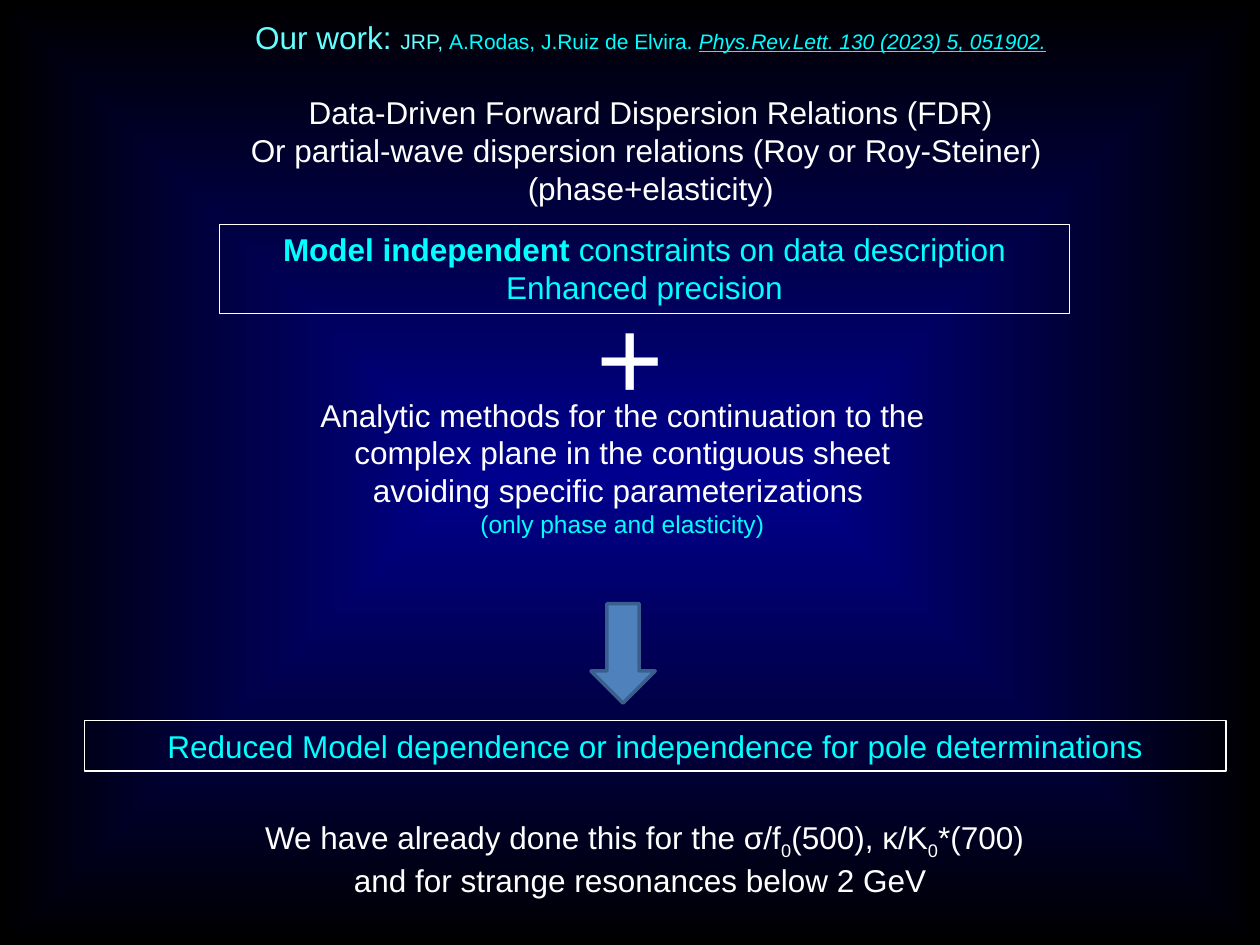
"""Build the slide on dispersion relations and pole determinations."""
import lxml.etree
import pptx
import pptx.dml.color
import pptx.enum.shapes
import pptx.enum.text
import pptx.oxml.ns
import pptx.util

Pt = pptx.util.Pt
RGB = pptx.dml.color.RGBColor
SHAPE = pptx.enum.shapes.MSO_SHAPE
qn = pptx.oxml.ns.qn

NAVY = RGB(0x00, 0x00, 0x8E)
BLACK = RGB(0x00, 0x00, 0x00)
WHITE = RGB(0xFF, 0xFF, 0xFF)
CYAN = RGB(0x00, 0xFF, 0xFF)
PALE_CYAN = RGB(0x66, 0xFF, 0xFF)
STEEL = RGB(0x4F, 0x81, 0xBD)
DARK_STEEL = RGB(0x3A, 0x5F, 0x8C)

SUB = {"baseline": "-25000"}
CITATION = {"size": 12, "color": CYAN}

# Each paragraph: size, colour, space before, runs of (text, overrides)
CONCLUSION = [(18, CYAN, 0, [
    ("Reduced Model dependence or independence for pole determinations", {})])]
METHOD = [
    (18, PALE_CYAN, 0, [
        ("Our work: ", {}),
        ("JRP, ", {"size": 12}),
        ("A.Rodas, J.Ruiz de Elvira. ", CITATION),
        ("Phys.Rev.Lett. 130 (2023) 5, 051902.",
         {**CITATION, "italic": True, "underline": True})]),
    (18, WHITE, 21.6, [("Data-Driven Forward Dispersion Relations (FDR)", {})]),
    (18, WHITE, 0, [("Or partial-wave dispersion relations (Roy or Roy-Steiner) ", {})]),
    (18, WHITE, 0, [("(phase+elasticity)", {})]),
]
RESULTS = [
    (18, WHITE, 0, [
        ("We have already done this for the σ/f", {}), ("0", SUB),
        ("(500), κ/K", {}), ("0", SUB), ("*(700)", {})]),
    (18, WHITE, 0, [("and for strange resonances below 2 GeV ", {})]),
]
CONSTRAINTS = [
    (18, CYAN, 0, [("Model independent ", {"bold": True}),
                   ("constraints on data description", {})]),
    (18, CYAN, 0, [("Enhanced precision", {})]),
]
PLUS = [(66, WHITE, 0, [("+", {})])]
CONTINUATION = [
    (18, WHITE, 0, [("Analytic methods for the continuation to the complex plane"
                     " in the contiguous sheet", {})]),
    (18, WHITE, 0, [("avoiding specific parameterizations ", {})]),
    (14, CYAN, 0, [("(only phase and elasticity)", {})]),
]

TEXT_BOXES = [
    (CONCLUSION, (48.24, 411.84, 652.32, 28.8), True, True),
    (METHOD, (133.92, 6.48, 475.92, 116.64), False, False),
    (RESULTS, (112.32, 463.68, 511.92, 51.12), False, True),
    (CONSTRAINTS, (125.28, 128.16, 486, 51.12), True, True),
    (PLUS, (333.36, 159.12, 53.28, 87.12), False, False),
    (CONTINUATION, (175.68, 222.48, 360, 90), False, True),
]
ARROW_PLACE = (337.68, 344.88, 36.72, 56.88)


def paint_background(page):
    fill = page.background.fill
    fill.gradient()
    for stop, color in zip(fill.gradient_stops, (NAVY, BLACK)):
        stop.color.rgb = color
    gradient = page.element.find(".//" + qn("a:gradFill"))
    gradient.remove(gradient.find(qn("a:lin")))
    focus = lxml.etree.SubElement(gradient, qn("a:path"), {"path": "shape"})
    lxml.etree.SubElement(focus, qn("a:fillToRect"),
                          {side: "50000" for side in "ltrb"})


def style_run(span, overrides):
    for key, value in overrides.items():
        if key == "size":
            span.font.size = Pt(value)
        elif key == "color":
            span.font.color.rgb = value
        elif key == "baseline":
            span._r.get_or_add_rPr().set(key, value)
        else:
            setattr(span.font, key, value)


def add_text(page, paragraphs, place, framed, wrap):
    place = [Pt(length) for length in place]
    if framed:
        box = page.shapes.add_shape(SHAPE.RECTANGLE, *place)
        box.shadow.inherit = False
        box.fill.background()
        box.line.color.rgb = WHITE
        box.line.width = Pt(0.75)
    else:
        box = page.shapes.add_textbox(*place)
    frame = box.text_frame
    frame.word_wrap = wrap
    frame.auto_size = pptx.enum.text.MSO_AUTO_SIZE.SHAPE_TO_FIT_TEXT
    frame.vertical_anchor = pptx.enum.text.MSO_ANCHOR.TOP
    for index, (size, color, before, runs) in enumerate(paragraphs):
        para = frame.add_paragraph() if index else frame.paragraphs[0]
        para.alignment = pptx.enum.text.PP_ALIGN.CENTER
        para.space_before = Pt(before)
        para.font.name = "Arial"
        para.font.size = Pt(size)
        para.font.color.rgb = color
        for text, overrides in runs:
            span = para.add_run()
            span.text = text
            style_run(span, overrides)


def add_arrow(page):
    arrow = page.shapes.add_shape(SHAPE.DOWN_ARROW, *map(Pt, ARROW_PLACE))
    arrow.shadow.inherit = False
    arrow.fill.solid()
    arrow.fill.fore_color.rgb = STEEL
    arrow.line.color.rgb = DARK_STEEL
    arrow.line.width = Pt(2)


def main():
    deck = pptx.Presentation()
    deck.slide_width, deck.slide_height = Pt(720), Pt(540)
    page = deck.slides.add_slide(deck.slide_layouts[6])
    paint_background(page)
    for text_box in TEXT_BOXES:
        add_text(page, *text_box)
    add_arrow(page)
    deck.save("out.pptx")


if __name__ == "__main__":
    main()
